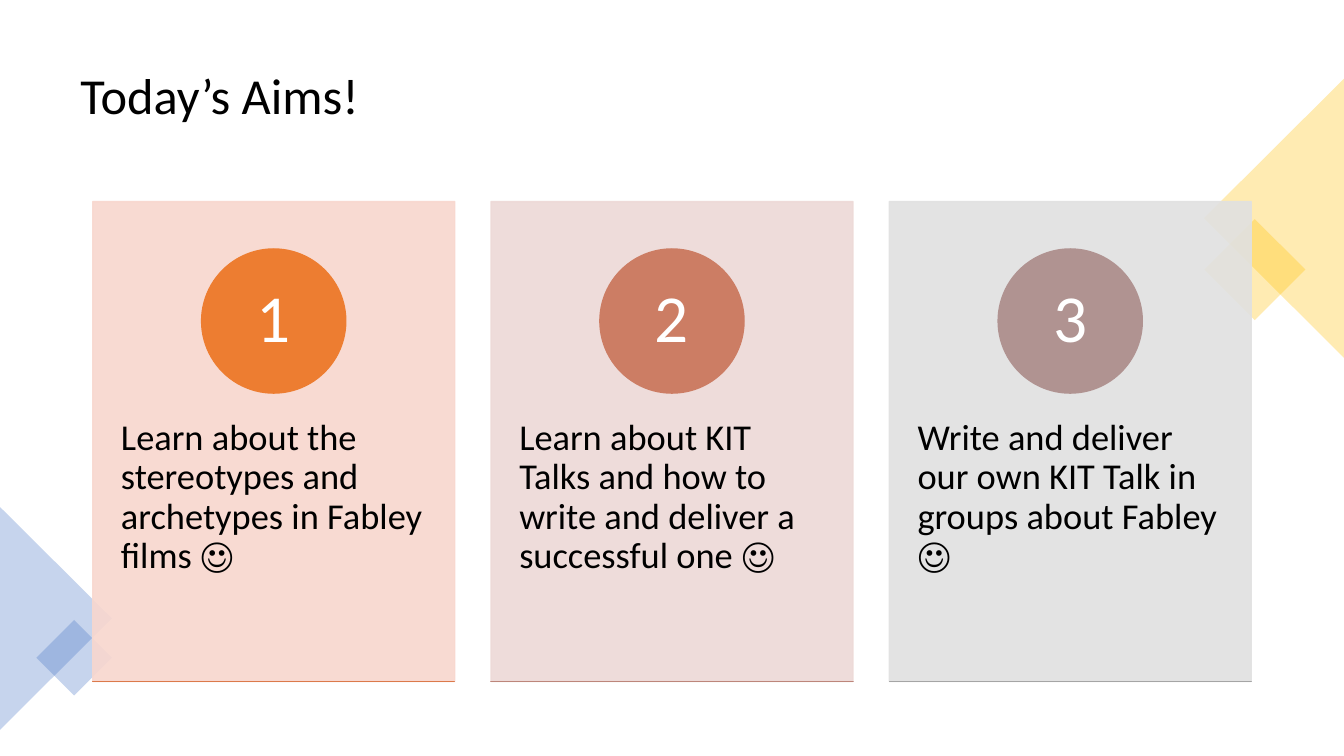
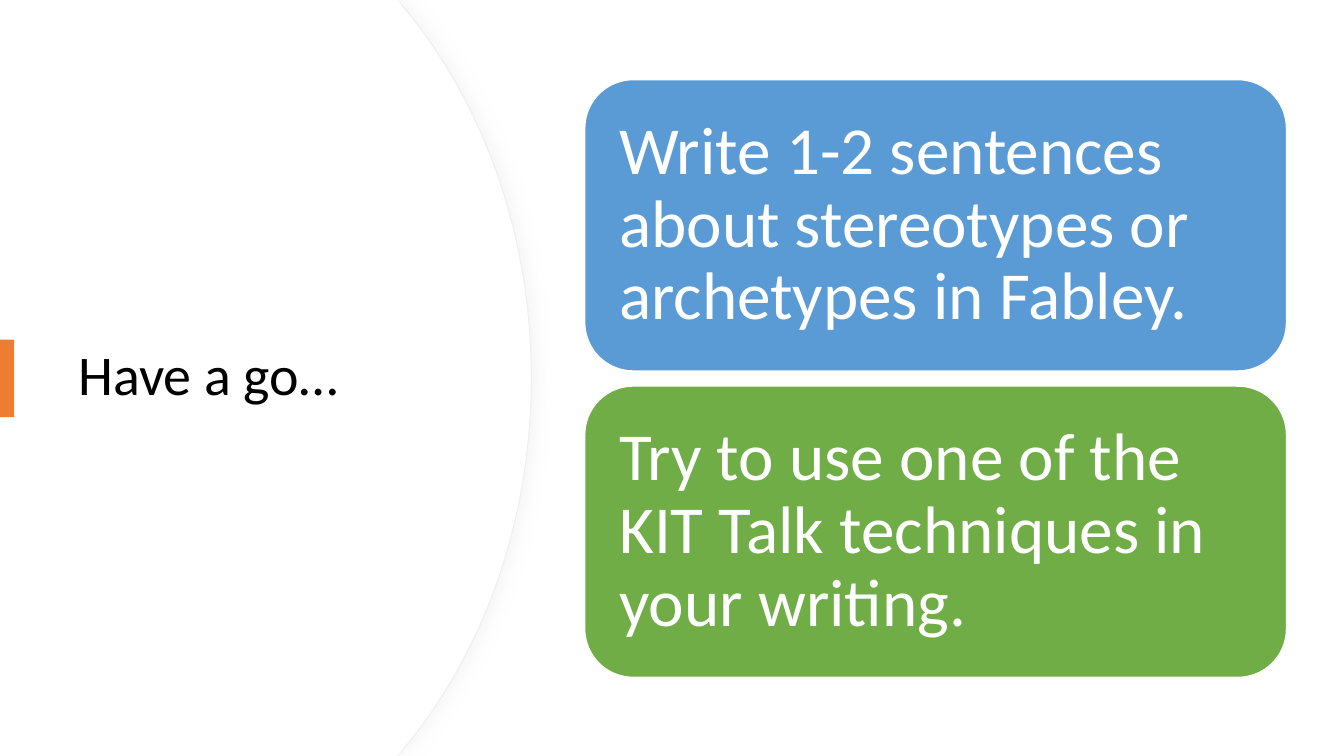
from dataclasses import dataclass

from lxml import etree
from pptx import Presentation
from pptx import util as u
from pptx.dml.color import RGBColor
from pptx.enum import shapes, text
from pptx.oxml import ns


@dataclass(frozen=True)
class Theme:
    """Colours, font and type sizes shared by the slides."""

    font: str = "Calibri"
    ink: str = "000000"
    paper: str = "FFFFFF"
    orange: str = "ED7D31"
    yellow: str = "FFC000"
    navy: str = "4472C4"
    blue: str = "5B9BD5"
    green: str = "70AD47"
    outline: str = "EFEFEF"
    shadow: str = "D9D9D9"
    title: int = 36
    side_title: int = 40
    body: int = 26
    display: int = 48


THEME = Theme()
KIND = shapes.MSO_SHAPE
ALIGN = text.PP_ALIGN
ANCHOR = text.MSO_ANCHOR

AIMS = [
    ("Learn about the stereotypes and archetypes in Fabley films ☺",
     "F8D7CE", THEME.orange, "DC7A4B"),
    ("Learn about KIT Talks and how to write and deliver a successful one ☺",
     "EDD9D7", "CC7D64", "BD867B"),
    ("Write and deliver our own KIT Talk in groups about Fabley ☺",
     "E1E1E1", "B09391", "A5A5A5"),
]
TASKS = [
    ("Write 1-2 sentences about stereotypes or archetypes in Fabley.", THEME.blue),
    ("Try to use one of the KIT Talk techniques in your writing.", THEME.green),
]


def inches(values):
    """Convert numbers to lengths."""
    return [u.Inches(value) for value in values]


def write_text(shape, content, size, color=THEME.ink, align=ALIGN.LEFT,
               anchor=ANCHOR.MIDDLE, insets=(0.1, 0.05, 0.1, 0.05)):
    """Fill a shape with one formatted paragraph."""
    frame = shape.text_frame
    frame.word_wrap = True
    frame.vertical_anchor = anchor
    (frame.margin_left, frame.margin_top,
     frame.margin_right, frame.margin_bottom) = inches(insets)
    paragraph = frame.paragraphs[0]
    paragraph.alignment = align
    paragraph.line_spacing = 0.9
    run = paragraph.add_run()
    run.text = content
    run.font.name = THEME.font
    run.font.size = u.Pt(size)
    run.font.color.rgb = RGBColor.from_string(color)


def paint(shape, fill, line=None, width=1, opacity=100):
    """Set fill, outline and opacity, without a shadow."""
    shape.shadow.inherit = False
    shape.fill.solid()
    shape.fill.fore_color.rgb = RGBColor.from_string(fill)
    if line:
        shape.line.color.rgb = RGBColor.from_string(line)
        shape.line.width = u.Pt(width)
    else:
        shape.line.fill.background()
    if opacity < 100:
        for color in shape.element.spPr.iter(ns.qn("a:srgbClr")):
            etree.SubElement(color, ns.qn("a:alpha"), val=str(opacity * 1000))


def add_block(slide, kind, box, fill, rotation=0, **style):
    """Add a painted preset shape."""
    shape = slide.shapes.add_shape(kind, *inches(box))
    shape.rotation = rotation
    paint(shape, fill, **style)
    return shape


def add_label(slide, content, box, size, **style):
    """Add a text box."""
    write_text(slide.shapes.add_textbox(*inches(box)), content, size, **style)


def add_corner(slide, triangle, square, color, rotation):
    """Add a translucent triangle and tilted square at a slide edge."""
    add_block(slide, KIND.ISOSCELES_TRIANGLE, triangle, color,
              rotation=rotation, opacity=30)
    add_block(slide, KIND.RECTANGLE, square, color, rotation=45, opacity=30)


def add_aim(slide, index, content, card_color, circle_color, rule_color):
    """Add a numbered aim card."""
    left, top, width, height, circle = 0.92 + 3.95 * index, 2, 3.59, 4.76, 1.43
    add_block(slide, KIND.RECTANGLE, (left, top, width, height),
              card_color, line=card_color, opacity=90)
    add_label(slide, content, (left, 3.8, width, 2.86), THEME.body,
              anchor=ANCHOR.TOP, insets=(0.28, 0.36, 0.28, 0.36))
    badge = add_block(slide, KIND.OVAL,
                      (left + (width - circle) / 2, 2.47, circle, circle),
                      circle_color, line=circle_color)
    write_text(badge, str(index + 1), THEME.display, THEME.paper, ALIGN.CENTER,
               insets=(0.11, 0.01, 0.11, 0.01))
    add_block(slide, KIND.RECTANGLE, (left, top + height, width, 0),
              rule_color, line=rule_color)


def curve_segments(shape, first, count):
    """Turn triples of straight segments into cubic curves."""
    segments = list(shape.element.spPr.iter(ns.qn("a:lnTo")))
    for start in range(first, first + 3 * count, 3):
        curve, *others = segments[start:start + 3]
        curve.tag = ns.qn("a:cubicBezTo")
        for segment in others:
            curve.append(segment[0])
            segment.getparent().remove(segment)


def add_dome(slide, right, **style):
    """Add a white panel with a curved right side."""
    shoulder, handle = right - 1.26, right - 0.48
    upper = [(3.94, 0), (shoulder, 0.08), (handle, 1.02), (right, 2.32)]
    lower = [(x, 7.5 - y) for x, y in reversed(upper)]
    outline = upper + [(right, 3.75)] + lower + [(0, 7.5)]
    builder = slide.shapes.build_freeform(0, 0, 1)
    builder.add_line_segments([inches(point) for point in outline], close=True)
    dome = builder.convert_to_shape()
    curve_segments(dome, first=2, count=2)
    paint(dome, THEME.paper, **style)
    return dome


def add_shadow(shape, color, opacity, blur, distance):
    """Give a shape a soft shadow to its right."""
    effects = shape.element.spPr.find(ns.qn("a:effectLst"))
    shadow = etree.SubElement(
        effects, ns.qn("a:outerShdw"), blurRad=str(u.Pt(blur)),
        dist=str(u.Pt(distance)), dir="0", algn="l", rotWithShape="0")
    tint = etree.SubElement(shadow, ns.qn("a:srgbClr"), val=color)
    etree.SubElement(tint, ns.qn("a:alpha"), val=str(opacity * 1000))


def add_task(slide, index, content, color):
    """Add a rounded task panel."""
    panel = add_block(slide, KIND.ROUNDED_RECTANGLE,
                      (5.8, 0.79 + 3.04 * index, 6.96, 2.89),
                      color, line=THEME.paper)
    write_text(panel, content, THEME.display, THEME.paper, insets=(0.2,) * 4)


def build_aims(slide):
    """Build the slide of aims."""
    add_label(slide, "Today’s Aims!", (0.7, 0.35, 11.93, 1.24), THEME.title)
    add_corner(slide, (11.25, 1.47, 2.77, 1.39), (12.09, 2.32, 0.71, 0.71),
               THEME.yellow, 270)
    add_corner(slide, (-0.55, 5.58, 2.21, 1.11), (0.47, 6.26, 0.53, 0.53),
               THEME.navy, 90)
    for index, aim in enumerate(AIMS):
        add_aim(slide, index, *aim)


def build_tasks(slide):
    """Build the slide of writing tasks."""
    dome = add_dome(slide, 5.27, line=THEME.outline, width=0.75)
    add_shadow(dome, THEME.shadow, opacity=25, blur=12, distance=3)
    add_dome(slide, 5.26)
    add_label(slide, "Have a go…", (0.68, 1.27, 3.94, 4.95), THEME.side_title)
    add_block(slide, KIND.RECTANGLE, (0, 3.37, 0.14, 0.77), THEME.orange)
    for index, task in enumerate(TASKS):
        add_task(slide, index, *task)


def main():
    """Build and save the presentation."""
    presentation = Presentation()
    presentation.slide_width, presentation.slide_height = inches((13.33, 7.5))
    blank = presentation.slide_layouts[6]
    for build in (build_aims, build_tasks):
        build(presentation.slides.add_slide(blank))
    presentation.save("out.pptx")


if __name__ == "__main__":
    main()
